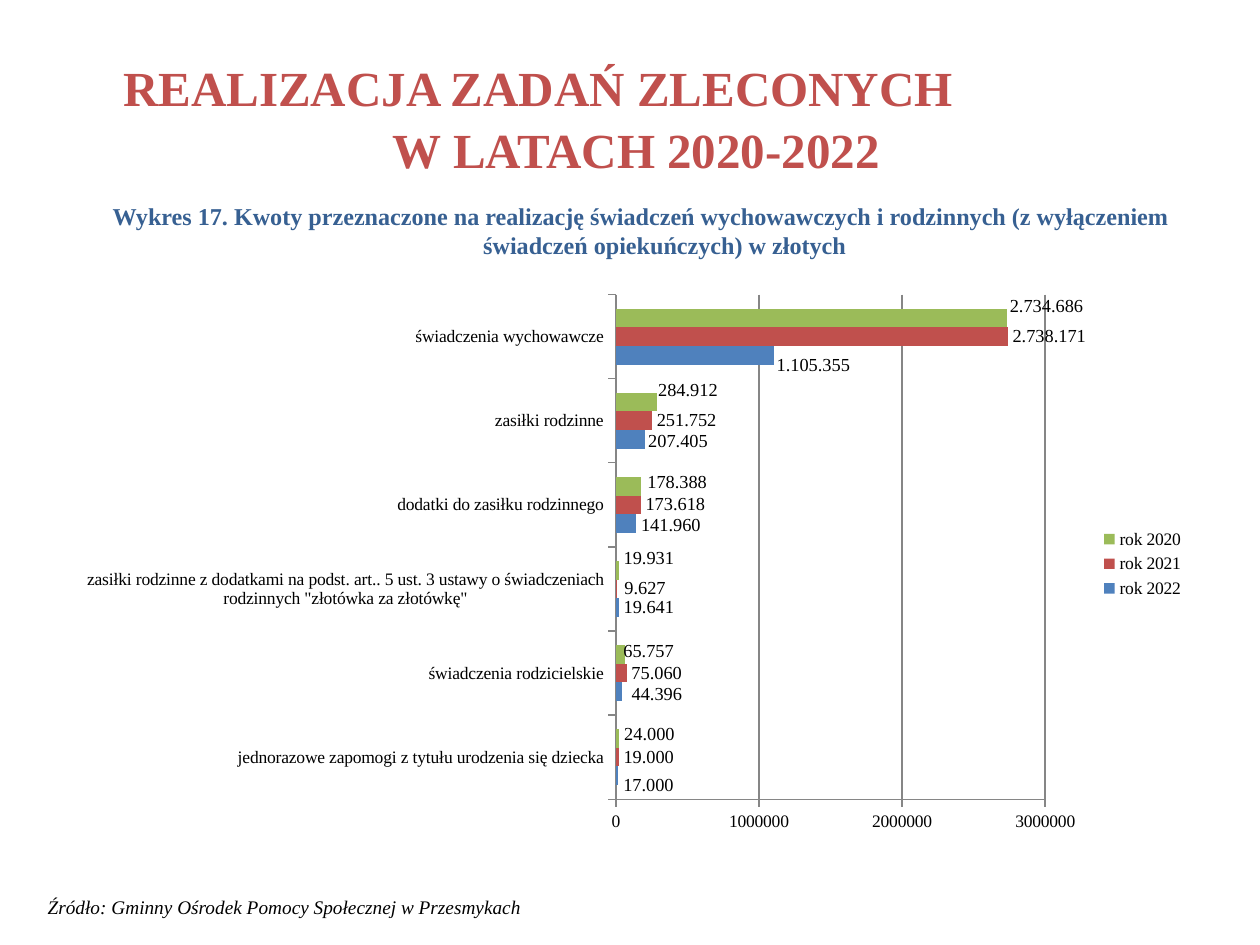
from pptx import Presentation
from pptx.chart.data import CategoryChartData
from pptx.dml.color import RGBColor
from pptx.enum.chart import XL_CHART_TYPE, XL_LABEL_POSITION, XL_LEGEND_POSITION, XL_TICK_MARK
from pptx.enum.text import MSO_ANCHOR, PP_ALIGN
from pptx.oxml import parse_xml
from pptx.oxml.ns import nsdecls
from pptx.util import Inches, Pt

FONT = "Times New Roman"
RED = RGBColor(0xC0, 0x50, 0x4D)
BLUE = RGBColor(0x4F, 0x81, 0xBD)
GREEN = RGBColor(0x9B, 0xBB, 0x59)
NAVY = RGBColor(0x37, 0x60, 0x92)
GRAY = RGBColor(0x86, 0x86, 0x86)
BLACK = RGBColor(0, 0, 0)

TITLE = "REALIZACJA ZADAŃ ZLECONYCH\vW LATACH 2020-2022"
CAPTION = ("Wykres 17. Kwoty przeznaczone na realizację świadczeń wychowawczych "
           "i rodzinnych (z wyłączeniem świadczeń opiekuńczych) w złotych")
SOURCE = "Źródło: Gminny Ośrodek Pomocy Społecznej w Przesmykach"

CATEGORIES = [
    "jednorazowe zapomogi z tytułu urodzenia się dziecka",
    "świadczenia rodzicielskie",
    "zasiłki rodzinne z dodatkami na podst. art.. 5 ust. 3 ustawy "
    "o świadczeniach rodzinnych \"złotówka za złotówkę\"",
    "dodatki do zasiłku rodzinnego",
    "zasiłki rodzinne",
    "świadczenia wychowawcze",
]
# name, colour, values, label shifts (x, y) in thousandths of the chart's size
SERIES = [
    ("rok 2022", BLUE, [17000, 44396, 19641, 141960, 207405, 1105355],
     [(0, 18), (4, 5), (0, 0), (0, 4), (-2, 4), (-2, 18)]),
    ("rok 2021", RED, [19000, 75060, 9627, 173618, 251752, 2738171],
     [(0, 0), (0, 0), (2, 0), (0, 0), (0, 0), (0, 0)]),
    ("rok 2020", GREEN, [24000, 65757, 19931, 178388, 284912, 2734686],
     [(0, -7), (-6, -5), (0, -21), (1, -7), (-3, -21), (-2, -21)]),
]


def add_text(s, text, box, size, color, bold=False, italic=False):
    tf = s.shapes.add_textbox(*(Inches(v) for v in box)).text_frame
    tf.word_wrap = True
    tf.text = text
    p = tf.paragraphs[0]
    for r in p.runs:
        r.font.name, r.font.size = FONT, Pt(size)
        r.font.bold, r.font.italic = bold, italic
        r.font.color.rgb = color
    return tf


def set_indent(p, left, first):
    pPr = p._p.get_or_add_pPr()
    pPr.set("marL", str(Inches(left)))
    pPr.set("indent", str(Inches(first)))


def set_font(font, size):
    font.name, font.size = FONT, Pt(size)
    font.color.rgb = BLACK


def manual_layout(**parts):
    items = "".join(f'<c:{k} val="{v}"/>' for k, v in parts.items())
    return parse_xml(f'<c:layout {nsdecls("c")}><c:manualLayout>{items}'
                     '</c:manualLayout></c:layout>')


prs = Presentation()
prs.slide_width, prs.slide_height = Inches(10), Inches(7.5)
s = prs.slides.add_slide(prs.slide_layouts[6])

# Title, with its two lines staggered by a hanging indent
tf = add_text(s, TITLE, (0.5, 0.3, 9, 1.25), 28, RED, bold=True)
tf.vertical_anchor = MSO_ANCHOR.MIDDLE
set_indent(tf.paragraphs[0], 2.52, -2.14)
tf.paragraphs[0].line_spacing = 1.05

# Chart caption
tf = add_text(s, CAPTION, (0.59, 1.55, 8.99, 0.5), 13.8, NAVY, bold=True)
tf.paragraphs[0].alignment = PP_ALIGN.CENTER
set_indent(tf.paragraphs[0], 0.38, -0.38)

# Chart
data = CategoryChartData()
data.categories = CATEGORIES
for name, _, values, _ in SERIES:
    data.add_series(name, values)
chart = s.shapes.add_chart(XL_CHART_TYPE.BAR_CLUSTERED, Inches(0.51), Inches(2.25),
                           Inches(8.99), Inches(4.45), data).chart
chart.has_title = False
set_font(chart.font, 10)
plot = chart.plots[0]
plot.gap_width = 150
plot.vary_by_categories = False

# Plot area position
area = chart._chartSpace.chart.plotArea
for old in area.findall("{*}layout"):
    area.remove(old)
area.insert(0, manual_layout(layoutTarget="inner", xMode="edge", yMode="edge",
                             x=0.487, y=0.02, w=0.379, h=0.9))

# Axes and legend
for axis in (chart.category_axis, chart.value_axis):
    axis.major_tick_mark = XL_TICK_MARK.OUTSIDE
    axis.minor_tick_mark = XL_TICK_MARK.NONE
    axis.format.line.color.rgb = GRAY
    set_font(axis.tick_labels.font, 10)
value_axis = chart.value_axis
value_axis.minimum_scale, value_axis.maximum_scale = 0, 3000000
value_axis.major_unit = 1000000
value_axis.has_major_gridlines = True
value_axis.major_gridlines.format.line.color.rgb = GRAY
chart.has_legend = True
chart.legend.position = XL_LEGEND_POSITION.RIGHT
chart.legend.include_in_layout = False
set_font(chart.legend.font, 10)

# Bars and their labels
for series, (_, color, values, shifts) in zip(plot.series, SERIES):
    series.format.fill.solid()
    series.format.fill.fore_color.rgb = color
    series.data_labels.show_value = True
    set_font(series.data_labels.font, 10.5)
    for i, value in enumerate(values):
        label = series.points[i].data_label
        label.text_frame.text = f"{value:,}".replace(",", ".")
        set_font(label.text_frame.paragraphs[0].runs[0].font, 10.5)
        label.position = XL_LABEL_POSITION.OUTSIDE_END
    for dLbl, (dx, dy) in zip(series._element.xpath("c:dLbls/c:dLbl"), shifts):
        if dx or dy:
            dLbl.insert(1, manual_layout(x=dx / 1000, y=dy / 1000))

# Source line
add_text(s, SOURCE, (0.28, 7.06, 5, 0.29), 11, BLACK, italic=True)

prs.save("out.pptx")
